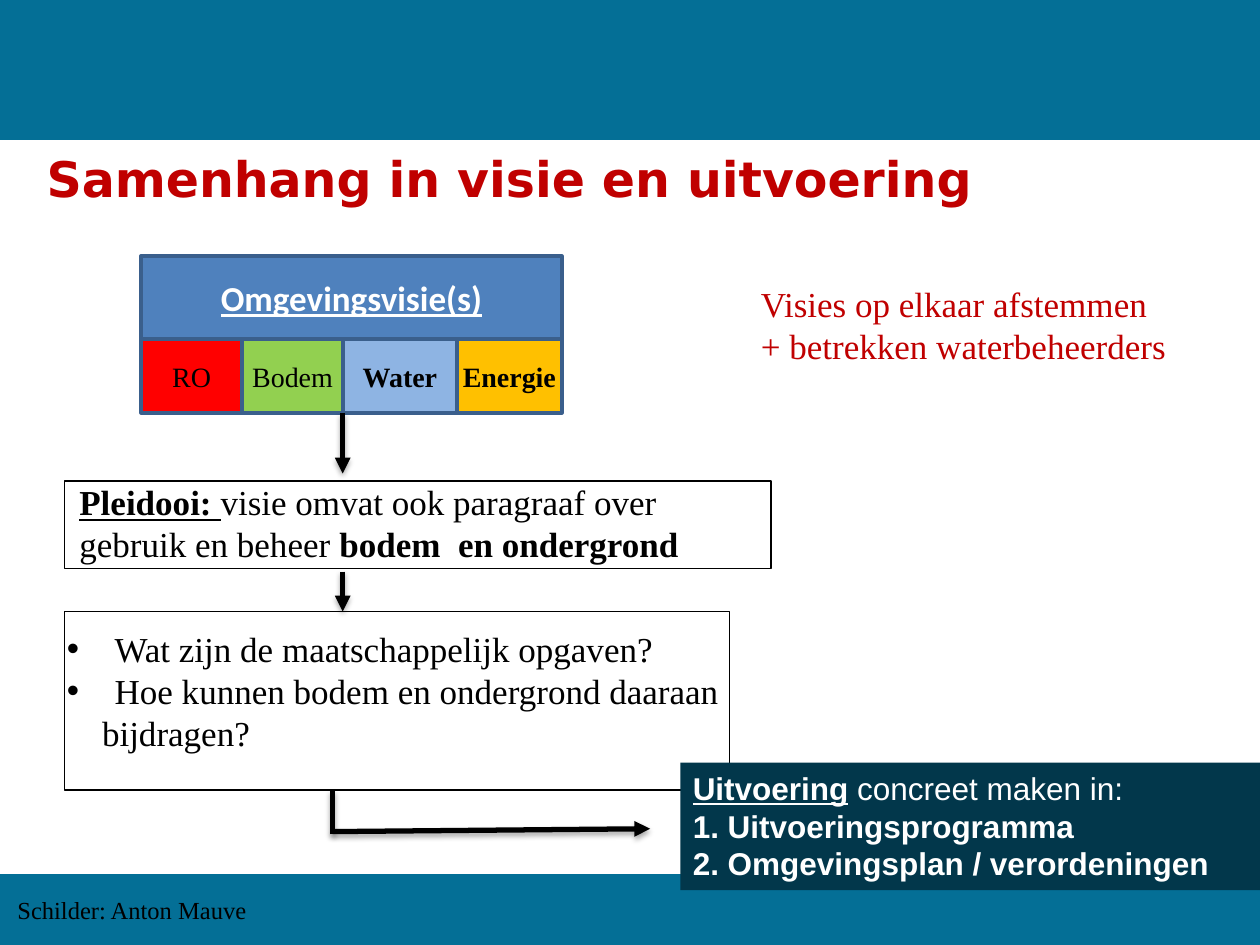
from lxml import etree
from pptx import Presentation
from pptx import util as u
from pptx.dml.color import RGBColor
from pptx.enum import shapes, text
from pptx.oxml import ns

WIDTH, HEIGHT = 10, 7.5
SERIF = "Times New Roman"
BLACK, WHITE, RED, TEAL = "000000", "FFFFFF", "C00000", "046F96"


def colour(value):
    """Turn a hex string into a colour."""
    return RGBColor.from_string(value)


def element(parent, tag, **attrs):
    """Append a drawing element to a parent."""
    return etree.SubElement(parent, ns.qn(tag), {k: str(v) for k, v in attrs.items()})


def part(box, left, top, width, height):
    """Return the share of a box given as fractions."""
    x, y, w, h = box
    return x + left * w, y + top * h, width * w, height * h


def inches(values):
    """Convert a sequence of numbers to inches."""
    return [u.Inches(v) for v in values]


def rect(s, box, fill=None, line=None, weight=0.75):
    """Draw a plain rectangle."""
    sp = s.shapes.add_shape(shapes.MSO_SHAPE.RECTANGLE, *inches(box))
    sp.shadow.inherit = False
    if fill:
        sp.fill.solid()
        sp.fill.fore_color.rgb = colour(fill)
    else:
        sp.fill.background()
    if line:
        sp.line.color.rgb = colour(line)
        sp.line.width = u.Pt(weight)
    else:
        sp.line.fill.background()
    return sp


def write(sp, paragraphs, size, rgb=BLACK, font=SERIF, insets=(0.1, 0.05, 0.1, 0.05),
          align=text.PP_ALIGN.LEFT, anchor=text.MSO_ANCHOR.TOP, wrap=True):
    """Fill a shape with paragraphs of (wording, style) runs, where b is bold and u underlined."""
    tf = sp.text_frame
    tf.word_wrap = wrap
    tf.vertical_anchor = anchor
    tf.margin_left, tf.margin_top, tf.margin_right, tf.margin_bottom = inches(insets)
    for i, runs in enumerate(paragraphs):
        p = tf.paragraphs[0] if i == 0 else tf.add_paragraph()
        p.alignment = align
        for wording, style in runs:
            r = p.add_run()
            r.text = wording
            r.font.name, r.font.size = font, u.Pt(size)
            r.font.color.rgb = colour(rgb)
            r.font.bold, r.font.underline = "b" in style, "u" in style
    return tf


def label(s, box, paragraphs, size, **options):
    """Place a text box."""
    return write(s.shapes.add_textbox(*inches(box)), paragraphs, size, **options)


def connect(s, start, end, arrow=True):
    """Draw a thick black line with a soft shadow."""
    sp = s.shapes.add_connector(shapes.MSO_CONNECTOR.STRAIGHT, *inches(start + end))
    sp.line.color.rgb = colour(BLACK)
    sp.line.width = u.Pt(3)
    if arrow:
        element(sp.line._get_or_add_ln(), "a:tailEnd", type="triangle")
    effects = element(sp._element.spPr, "a:effectLst")
    shadow = element(effects, "a:outerShdw", blurRad=u.Pt(3.1), dist=u.Pt(1.8),
                     dir=5400000, rotWithShape=0)
    element(element(shadow, "a:srgbClr", val=BLACK), "a:alpha", val=35000)


def frame(s, box):
    """Draw the header and footer bands and the credit."""
    rect(s, part(box, 0, 0, 1, 0.148), TEAL)
    footer = part(box, 0, 0.925, 1, 0.075)
    rect(s, footer, TEAL)
    label(s, part(footer, 0.004, 0.21, 0.216, 0.6), [[("Schilder: Anton Mauve", "")]],
          14, wrap=False)


def vision(s, box):
    """Draw the vision block with its four themes."""
    outline, head = "3A5F8C", 0.53
    centred = dict(align=text.PP_ALIGN.CENTER, anchor=text.MSO_ANCHOR.MIDDLE)
    sp = rect(s, part(box, 0, 0, 1, head), "4F81BD", outline, 2)
    write(sp, [[("Omgevingsvisie(s)", "bu")]], 20, WHITE, "Calibri", **centred)
    themes = [("RO", "", "FF0000", 0.24), ("Bodem", "", "92D050", 0.24),
              ("Water", "b", "8EB4E3", 0.27), ("Energie", "b", "FFC000", 0.25)]
    left = 0
    for name, style, fill, width in themes:
        sp = rect(s, part(box, left, head, width, 1 - head), fill, outline, 2)
        write(sp, [[(name, style)]], 16, insets=(0, 0, 0, 0), wrap=False, **centred)
        left += width


def plea(s, box):
    """Draw the framed plea."""
    runs = [("Pleidooi: ", "bu"), ("visie omvat ook paragraaf over gebruik en beheer ", ""),
            ("bodem  en ondergrond", "b")]
    write(rect(s, box, line=BLACK), [runs], 20, insets=(0.12, 0, 0.4, 0))


def questions(s, box):
    """Draw the framed list of questions."""
    lines = ["Wat zijn de maatschappelijk opgaven?",
             "Hoe kunnen bodem en ondergrond daaraan", "bijdragen?"]
    tf = write(rect(s, box, line=BLACK), [[(line, "")] for line in lines], 20,
               insets=(0.02, 0.13, 0, 0))
    for p, indent, bullet in zip(tf.paragraphs, (0.38, 0.38, 0.28), (True, True, False)):
        pPr = p._p.get_or_add_pPr()
        pPr.set("marL", str(u.Inches(indent)))
        pPr.set("indent", str(-u.Inches(indent) if bullet else 0))
        if bullet:
            element(pPr, "a:buFont", typeface="Arial")
            element(pPr, "a:buChar", char="•")


def execution(s, box):
    """Draw the dark panel about execution."""
    write(rect(s, box, "02374B"),
          [[("Uitvoering", "bu"), (" concreet maken in:", "")],
           [("1. Uitvoeringsprogramma", "b")],
           [("2. Omgevingsplan / verordeningen", "b")]], 18, WHITE, "Arial")


def flow(s, box):
    """Draw the arrows that link the blocks."""
    def at(x, y):
        return part(box, x, y, 0, 0)[:2]

    connect(s, at(0.272, 0.437), at(0.272, 0.501))
    connect(s, at(0.272, 0.605), at(0.272, 0.647))
    connect(s, at(0.264, 0.88), at(0.516, 0.877))
    connect(s, at(0.264, 0.883), at(0.264, 0.836), arrow=False)


def main():
    """Build the slide."""
    prs = Presentation()
    prs.slide_width, prs.slide_height = inches((WIDTH, HEIGHT))
    s = prs.slides.add_slide(prs.slide_layouts[6])
    page = (0, 0, WIDTH, HEIGHT)
    frame(s, page)
    plea(s, part(page, 0.051, 0.509, 0.561, 0.093))
    questions(s, part(page, 0.051, 0.647, 0.528, 0.189))
    vision(s, part(page, 0.112, 0.271, 0.334, 0.166))
    execution(s, part(page, 0.54, 0.807, 0.46, 0.135))
    flow(s, page)
    label(s, part(page, 0.037, 0.157, 0.936, 0.108),
          [[("Samenhang in visie en uitvoering", "b")]], 28, rgb=RED,
          font="DejaVu Sans", insets=(0, 0, 0, 0))
    label(s, part(page, 0.594, 0.292, 0.385, 0.103),
          [[("Visies op elkaar afstemmen", "")], [("+ betrekken waterbeheerders", "")]],
          20, rgb=RED, wrap=False)
    prs.save("out.pptx")


if __name__ == "__main__":
    main()
